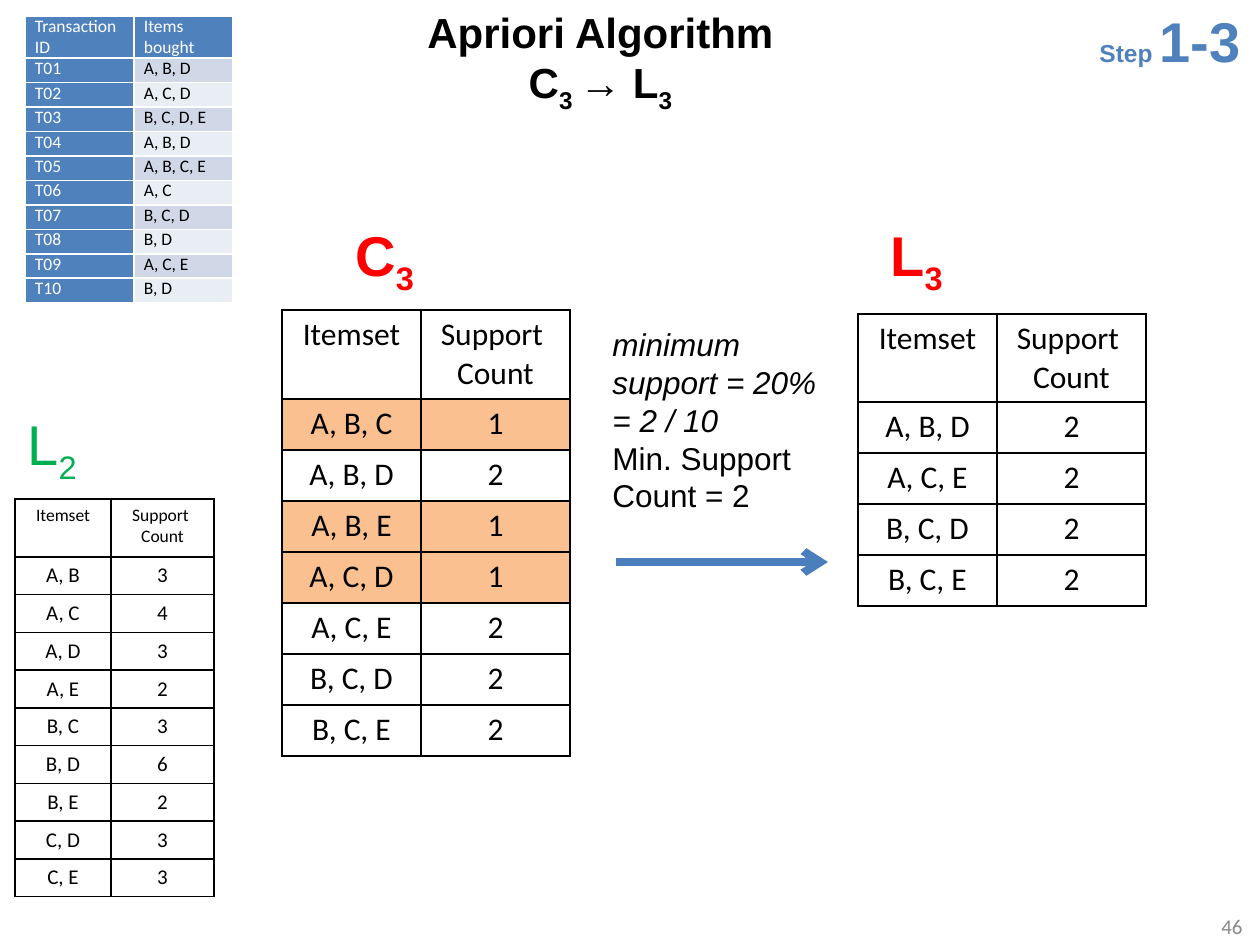
from lxml import etree
from pptx import Presentation
from pptx.dml.color import RGBColor
from pptx.enum.shapes import MSO_CONNECTOR
from pptx.enum.text import MSO_ANCHOR, MSO_AUTO_SIZE, PP_ALIGN
from pptx.oxml.ns import qn
from pptx.util import Emu, Pt

LEFT, CENTER, RIGHT = PP_ALIGN.LEFT, PP_ALIGN.CENTER, PP_ALIGN.RIGHT
TOP, MIDDLE = MSO_ANCHOR.TOP, MSO_ANCHOR.MIDDLE
NO_FIT, GROW = MSO_AUTO_SIZE.NONE, MSO_AUTO_SIZE.SHAPE_TO_FIT_TEXT
STRAIGHT = MSO_CONNECTOR.STRAIGHT

COLORS = {
    "black": "000000", "white": "FFFFFF", "red": "FF0000", "green": "00B050",
    "blue": "4F81BD", "arrow": "4B7EBC", "gray": "898989",
    "band": "D0D8E8", "light": "E9EDF4", "pruned": "FAC090",
}
SUBSCRIPT = {"baseline": "-25000"}
HEADER = ("Itemset", "Support \vCount")


def px(value):
    return Emu(round(value * 914400 / 126))


def color(name):
    return RGBColor.from_string(COLORS[name])


class SlideBuilder:
    def __init__(self, slide, head_font="Arial", body_font="Calibri"):
        self.slide = slide
        self.head_font = head_font
        self.body_font = body_font

    def format(self, p, size, ink, font, align=LEFT, bold=False, italic=False):
        p.alignment = align
        for r in p.runs:
            r.font.size = Pt(size)
            r.font.name = font
            r.font.bold = bold
            r.font.italic = italic
            r.font.color.rgb = color(ink)

    def fill_text(self, tf, text, size, ink, font=None, align=LEFT,
                  bold=False, alternate=SUBSCRIPT):
        tf.text = text
        for p in tf.paragraphs:
            pieces = p.text.split("|")
            if len(pieces) > 1:
                p.text = ""
                for piece in pieces:
                    p.add_run().text = piece
            self.format(p, size, ink, font or self.head_font, align, bold)
            if len(pieces) > 1:
                for r in p.runs[1::2]:
                    for key, value in alternate.items():
                        r._r.get_or_add_rPr().set(key, value)

    def title(self, box, text, size):
        sp = self.slide.shapes.title
        sp.left, sp.top, sp.width, sp.height = map(px, box)
        tf = sp.text_frame
        tf.word_wrap = True
        tf.auto_size = NO_FIT
        tf.vertical_anchor = TOP
        self.fill_text(tf, text, size, "black", align=CENTER, bold=True)

    def label(self, box, text, size, ink, anchor=TOP, **style):
        tf = self.slide.shapes.add_textbox(*map(px, box)).text_frame
        tf.word_wrap = False
        tf.auto_size = GROW if anchor == TOP else NO_FIT
        tf.vertical_anchor = anchor
        self.fill_text(tf, text, size, ink, **style)
        return tf

    def arrow(self, x1, y1, x2, y2, width):
        line = self.slide.shapes.add_connector(STRAIGHT, *map(px, (x1, y1, x2, y2)))
        line.line.color.rgb = color("arrow")
        line.line.width = Pt(width)
        etree.SubElement(line.line._get_or_add_ln(), qn("a:tailEnd"), type="arrow")
        etree.SubElement(line._element.spPr, qn("a:effectLst"))

    def borders(self, cell, ink):
        tc_pr = cell._tc.get_or_add_tcPr()
        for side in ("lnL", "lnR", "lnT", "lnB"):
            ln = etree.SubElement(tc_pr, qn(f"a:{side}"), w=str(Pt(1)))
            fill = etree.SubElement(ln, qn("a:solidFill"))
            etree.SubElement(fill, qn("a:srgbClr"), val=COLORS[ink])

    def table(self, x, y, widths, head, height, rows, style, border="black",
              margins=(13, 6)):
        frame = self.slide.shapes.add_table(
            len(rows), len(widths), *map(px, (x, y, sum(widths), height)))
        table = frame.table
        table.first_row = table.horz_banding = False
        for column, width in zip(table.columns, widths):
            column.width = px(width)
        for i, values in enumerate(rows):
            table.rows[i].height = px((height - head) / (len(rows) - 1) if i else head)
            for j, value in enumerate(values):
                cell = table.cell(i, j)
                cell.margin_left = cell.margin_right = px(margins[0])
                cell.margin_top = cell.margin_bottom = px(margins[1])
                self.borders(cell, border)
                size, ink, back, align = style(i, j, values)
                if back:
                    cell.fill.solid()
                    cell.fill.fore_color.rgb = color(back)
                else:
                    cell.fill.background()
                p = cell.text_frame.paragraphs[0]
                p.text = value
                self.format(p, size, ink, self.body_font, align)


def transaction_style(i, j, values):
    if i == 0 or j == 0:
        return 10, "white", "blue", LEFT
    return 10, "black", "band" if i % 2 else "light", LEFT


def itemset_style(i, j, values):
    return 18, "black", "pruned" if values[1] == "1" else None, CENTER


def small_style(i, j, values):
    return 12 if i else 10, "black", None, CENTER


def main():
    prs = Presentation()
    prs.slide_width, prs.slide_height = px(1260), px(945)
    s = SlideBuilder(prs.slides.add_slide(prs.slide_layouts[5]))

    baskets = ("A, B, D", "A, C, D", "B, C, D, E", "A, B, D", "A, B, C, E",
               "A, C", "B, C, D", "B, D", "A, C, E", "B, D")
    transactions = [("Transaction ID", "Items bought")]
    transactions += [(f"T{n:02d}", items) for n, items in enumerate(baskets, 1)]
    candidates = [("A, B, C", "1"), ("A, B, D", "2"), ("A, B, E", "1"),
                  ("A, C, D", "1"), ("A, C, E", "2"), ("B, C, D", "2"),
                  ("B, C, E", "2")]
    frequent = [row for row in candidates if int(row[1]) >= 2]
    pairs = [("A, B", "3"), ("A, C", "4"), ("A, D", "3"), ("A, E", "2"),
             ("B, C", "3"), ("B, D", "6"), ("B, E", "2"), ("C, D", "3"),
             ("C, E", "3")]

    s.title((392, 0, 417, 115), "Apriori Algorithm\nC|3 |→ L|3", 24)
    s.label((1087, 0, 168, 81), "Step |1-3", 14, "blue", bold=True,
            alternate={"sz": "3200"})

    s.table(25, 16, (109, 99), 42, 287, transactions, transaction_style,
            border="white", margins=(10, 0))
    s.table(282, 310, (139, 149), 89, 446, [HEADER] + candidates, itemset_style)
    s.table(858, 314, (139, 149), 88, 292, [HEADER] + frequent, itemset_style)
    s.table(15, 499, (96, 103), 58, 398, [HEADER] + pairs, small_style)

    s.label((343, 214, 87, 81), "C|3", 32, "red", bold=True)
    s.label((878, 214, 81, 81), "L|3", 32, "red", bold=True)
    s.label((15, 403, 78, 81), "L|2", 32, "green")

    note = s.label((600, 319, 232, 204),
                   "minimum \vsupport = 20%\n= 2 / 10\nMin. Support \vCount = 2",
                   18, "black")
    for p in note.paragraphs[:2]:
        for r in p.runs:
            r.font.italic = True

    s.arrow(616, 562, 828, 562, 4.5)
    s.label((1176, 910, 79, 32), "46", 12, "gray", anchor=MIDDLE,
            font=s.body_font, align=RIGHT)
    prs.save("out.pptx")


if __name__ == "__main__":
    main()
